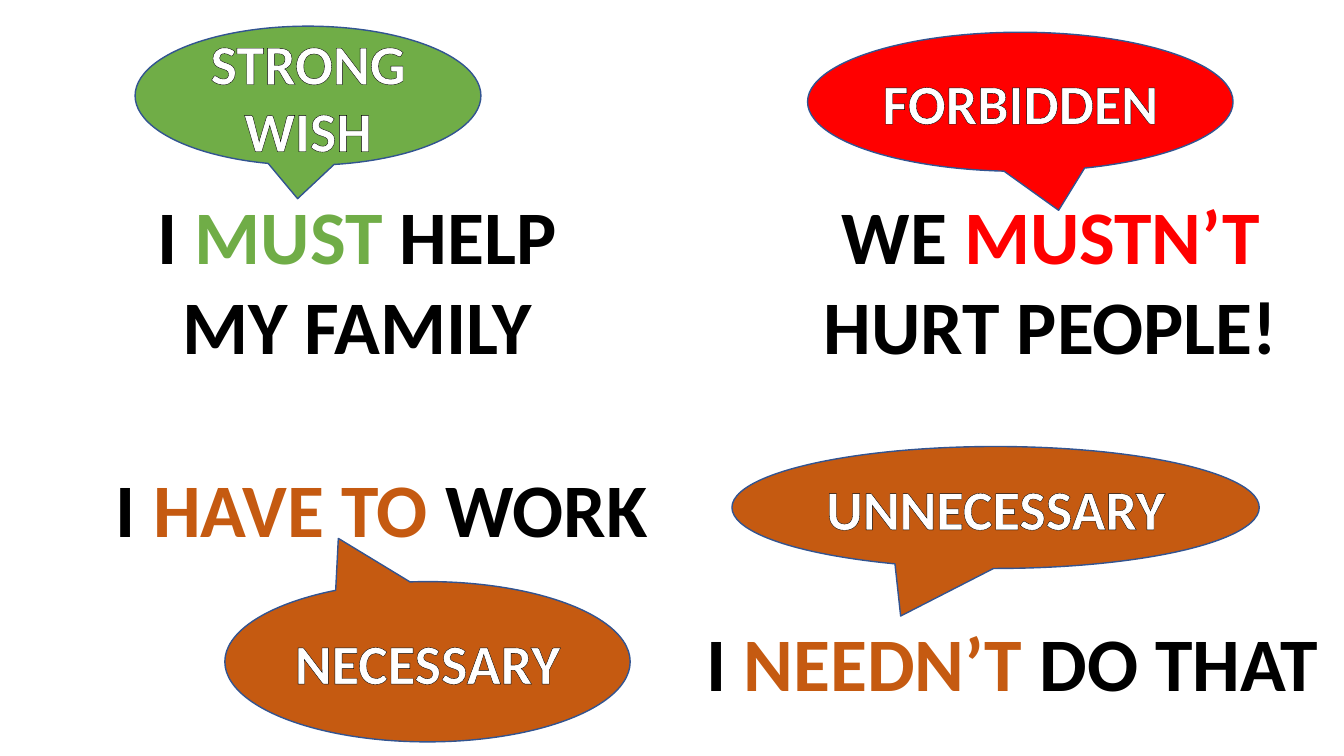
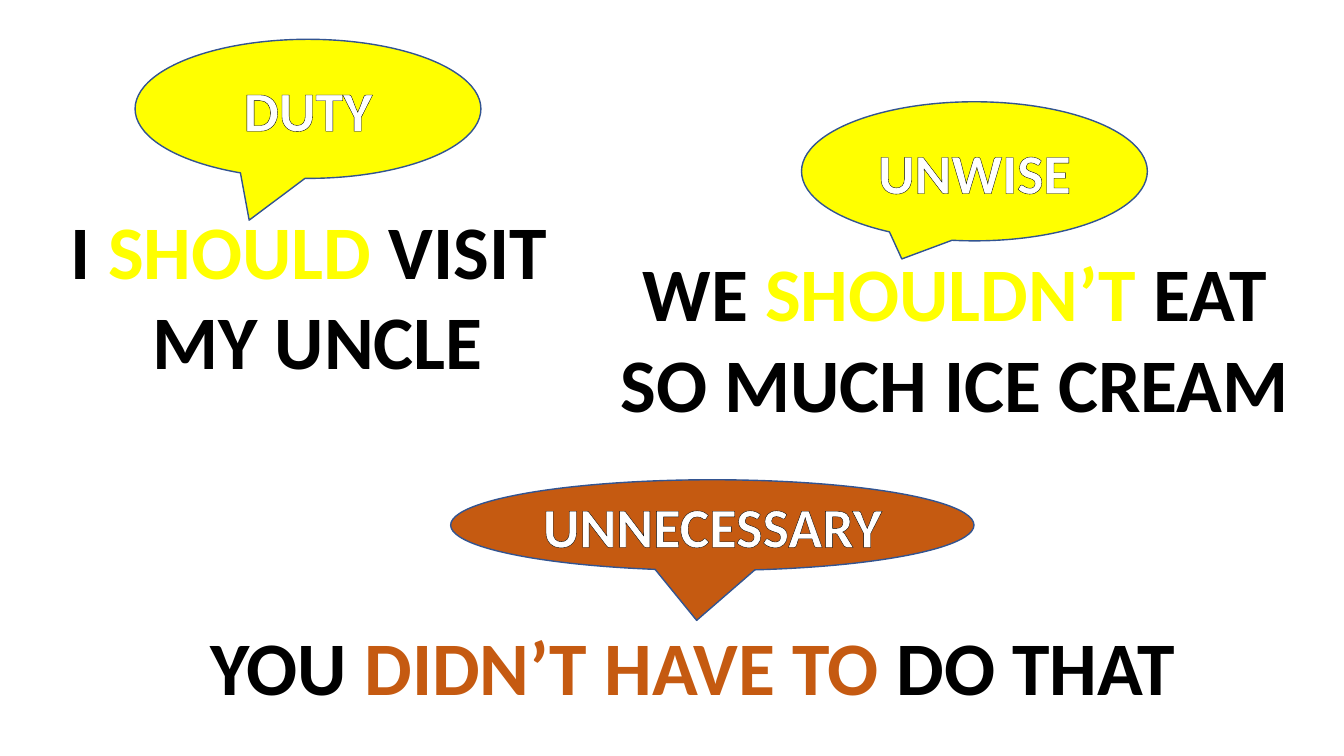
from dataclasses import dataclass
from typing import NamedTuple

from lxml.etree import SubElement
from pptx import Presentation
from pptx.dml.color import RGBColor
from pptx.enum.shapes import MSO_SHAPE
from pptx.enum.text import MSO_ANCHOR, MSO_AUTO_SIZE, PP_ALIGN
from pptx.oxml import parse_xml
from pptx.oxml.ns import nsdecls, qn
from pptx.util import Emu, Pt


@dataclass(frozen=True)
class Theme:
    """Colours and type sizes of the deck."""
    font: str = "Calibri"
    ink: str = "000000"
    paper: str = "FFFFFF"
    edge: str = "325491"
    wish: str = "70AD47"
    ban: str = "FF0000"
    need: str = "C55A11"
    duty: str = "FFFF00"
    big: int = 54
    mid: int = 40
    rim: int = 1


THEME = Theme()
SCALE = 9144
WIDTH, HEIGHT = 1333, 750


class Box(NamedTuple):
    """Left, top, width and height in px."""
    left: int
    top: int
    width: int
    height: int

    def emu(self) -> list[Emu]:
        """Give the four lengths in EMU."""
        return [Emu(n * SCALE) for n in self]


@dataclass(frozen=True)
class Phrase:
    """A sentence with one coloured modal verb."""
    box: Box
    head: str
    verb: str
    tail: str
    hue: str
    more: str = ""
    align: PP_ALIGN = PP_ALIGN.CENTER


@dataclass(frozen=True)
class Bubble:
    """A speech bubble and the offset of its tip."""
    box: Box
    label: str
    hue: str
    tip: tuple[float, float]


@dataclass(frozen=True)
class Page:
    """All parts of one slide and its letter outline in points."""
    stroke: float
    phrases: list[Phrase]
    bubbles: list[Bubble]


PAGES = [
    Page(0.75, [
        Phrase(Box(793, 182, 498, 192), "WE ", "MUSTN’T", " HURT PEOPLE!", THEME.ban),
        Phrase(Box(682, 606, 644, 101), "I ", "NEEDN’T", " DO THAT", THEME.need),
        Phrase(Box(105, 453, 552, 101), "I ", "HAVE TO ", "WORK", THEME.need,
               align=PP_ALIGN.LEFT),
        Phrase(Box(134, 182, 440, 192), "I ", "MUST", " HELP MY FAMILY", THEME.wish),
    ], [
        Bubble(Box(801, 32, 422, 138), "FORBIDDEN", THEME.ban, (0.09, 0.78)),
        Bubble(Box(134, 26, 343, 138), "STRONG WISH", THEME.wish, (-0.03, 0.74)),
        Bubble(Box(223, 577, 402, 159), "NECESSARY", THEME.need, (-0.22, -0.77)),
        Bubble(Box(726, 443, 523, 121), "UNNECESSARY", THEME.need, (-0.18, 0.89)),
    ]),
    Page(2.25, [
        Phrase(Box(192, 610, 990, 101), "YOU ", "DIDN’T HAVE TO ", "DO THAT", THEME.need),
        Phrase(Box(577, 239, 740, 192), "WE ", "SHOULDN’T", " EAT SO MUCH ICE CREAM",
               THEME.duty),
        Phrase(Box(0, 197, 630, 192), "I ", "SHOULD", " VISIT ", THEME.duty, "MY UNCLE"),
    ], [
        Bubble(Box(795, 101, 343, 138), "UNWISE", THEME.duty, (-0.21, 0.63)),
        Bubble(Box(134, 39, 343, 138), "DUTY", THEME.duty, (-0.17, 0.8)),
        Bubble(Box(447, 476, 519, 90), "UNNECESSARY", THEME.need, (-0.03, 1.05)),
    ]),
]


def style(run, size: int, hue: str, stroke: float = 0) -> None:
    """Format a run, with a dark letter outline if asked for."""
    font = run.font
    font.name, font.size, font.bold = THEME.font, Pt(size), True
    font.color.rgb = RGBColor.from_string(hue)
    if stroke:
        line = parse_xml(f'<a:ln {nsdecls("a")} w="{Pt(stroke)}"/>')
        fill = SubElement(line, qn("a:solidFill"))
        SubElement(fill, qn("a:srgbClr"), val=THEME.ink)
        run._r.get_or_add_rPr().insert(0, line)


def write(slide, item: Phrase, stroke: float) -> None:
    """Add a sentence to the slide."""
    frame = slide.shapes.add_textbox(*item.box.emu()).text_frame
    frame.word_wrap = True
    frame.auto_size = MSO_AUTO_SIZE.SHAPE_TO_FIT_TEXT
    para = frame.paragraphs[0]
    para.alignment = item.align
    parts = [(item.head, THEME.ink, 0), (item.verb, item.hue, stroke),
             (item.tail, THEME.ink, 0)]
    for text, hue, width in parts:
        run = para.add_run()
        run.text = text
        style(run, THEME.big, hue, width)
    if item.more:
        para = frame.add_paragraph()
        para.text = item.more
        para.alignment = item.align
        style(para.runs[0], THEME.big, THEME.ink)


def blow(slide, item: Bubble, stroke: float) -> None:
    """Add a speech bubble to the slide."""
    shape = slide.shapes.add_shape(MSO_SHAPE.OVAL_CALLOUT, *item.box.emu())
    shape.shadow.inherit = False
    for index, value in enumerate(item.tip):
        shape.adjustments[index] = value
    shape.fill.solid()
    shape.fill.fore_color.rgb = RGBColor.from_string(item.hue)
    shape.line.color.rgb = RGBColor.from_string(THEME.edge)
    shape.line.width = Pt(THEME.rim)
    frame = shape.text_frame
    frame.word_wrap = True
    frame.vertical_anchor = MSO_ANCHOR.MIDDLE
    frame.text = item.label
    para = frame.paragraphs[0]
    para.alignment = PP_ALIGN.CENTER
    style(para.runs[0], THEME.mid, THEME.paper, stroke)


def main() -> None:
    """Build and save the deck."""
    deck = Presentation()
    deck.slide_width, deck.slide_height = Emu(WIDTH * SCALE), Emu(HEIGHT * SCALE)
    for page in PAGES:
        slide = deck.slides.add_slide(deck.slide_layouts[6])
        for phrase in page.phrases:
            write(slide, phrase, page.stroke)
        for bubble in page.bubbles:
            blow(slide, bubble, page.stroke)
    deck.save("out.pptx")


if __name__ == "__main__":
    main()
